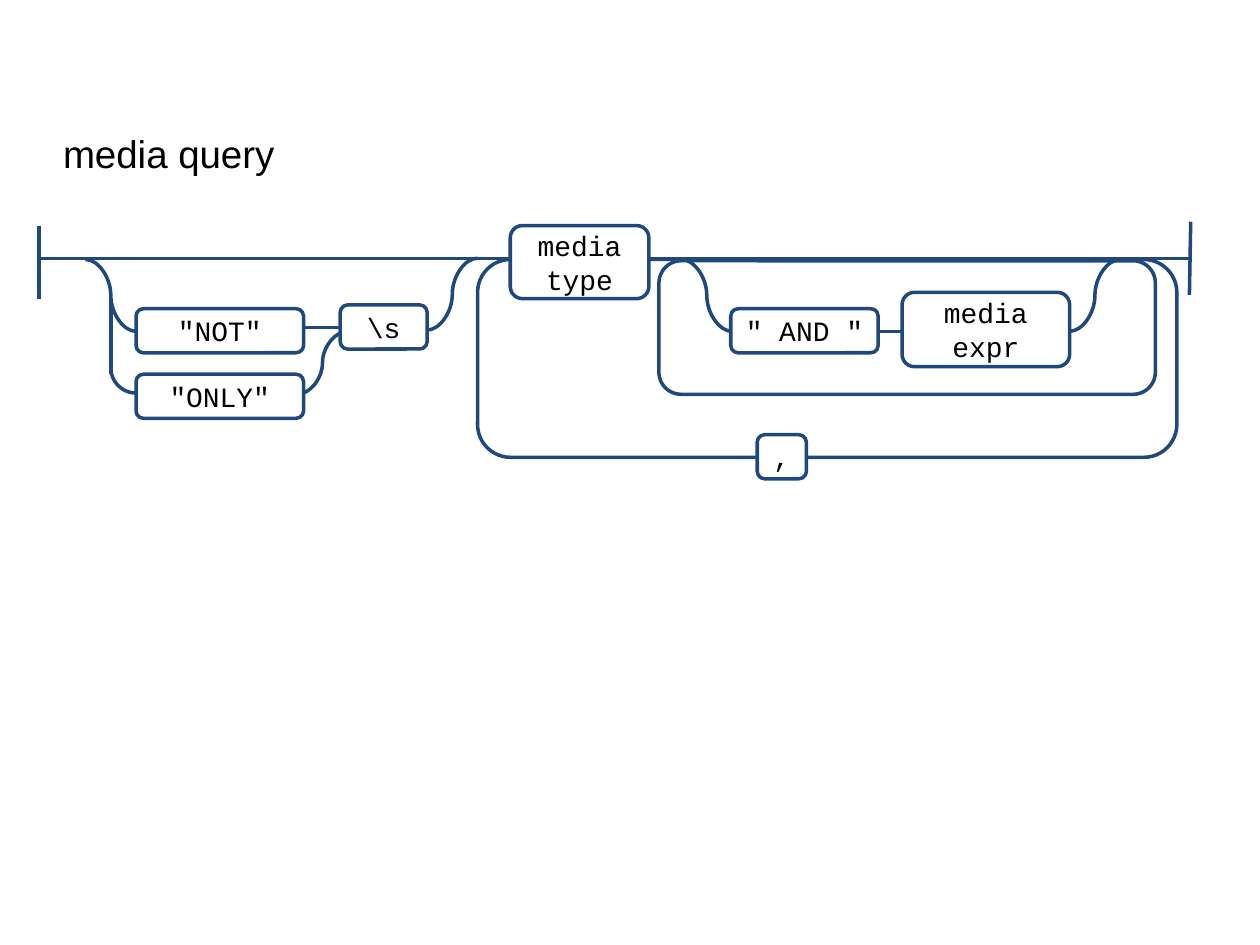
from typing import NamedTuple

from lxml import etree
from pptx import Presentation
from pptx.dml.color import RGBColor
from pptx.enum import shapes, text
from pptx.oxml import ns
from pptx.util import Inches, Pt

INK, WHITE, BLACK = "1F497D", "FFFFFF", "000000"
KIND = shapes.MSO_SHAPE
LINK = shapes.MSO_CONNECTOR
MID = 2.63
RAIL = 2.06


class Box(NamedTuple):
    x: float
    y: float
    w: float
    h: float
    label: str = ""
    fill: str | None = WHITE
    kind: int = KIND.FLOWCHART_ALTERNATE_PROCESS


class Wire(NamedTuple):
    x1: float
    y1: float
    x2: float
    y2: float
    width: float = 2
    kind: int = LINK.STRAIGHT


def hue(code: str) -> RGBColor:
    return RGBColor.from_string(code)


def write(shape, words, size=16, font="Courier New", align="CENTER", anchor="MIDDLE"):
    frame = shape.text_frame
    frame.word_wrap = True
    frame.auto_size = text.MSO_AUTO_SIZE.NONE
    frame.vertical_anchor = text.MSO_ANCHOR[anchor]
    para = frame.paragraphs[0]
    para.alignment = text.PP_ALIGN[align]
    run = para.add_run()
    run.text = words
    run.font.size = Pt(size)
    run.font.name = font
    run.font.color.rgb = hue(BLACK)


def stroke(line, width: float = 2) -> None:
    line.color.rgb = hue(INK)
    line.width = Pt(width)


def place(slide, box: Box):
    spot = [Inches(n) for n in box[:4]]
    shape = slide.shapes.add_shape(box.kind, *spot)
    shape.shadow.inherit = False
    if box.fill:
        shape.fill.solid()
        shape.fill.fore_color.rgb = hue(box.fill)
    else:
        shape.fill.background()
    stroke(shape.line)
    if box.label:
        write(shape, box.label)
    return shape


def join(slide, wire: Wire) -> None:
    ends = [Inches(n) for n in wire[:4]]
    link = slide.shapes.add_connector(wire.kind, *ends)
    stroke(link.line, wire.width)
    etree.SubElement(link._element.spPr, ns.qn("a:effectLst"))


def bend(x: float, y1: float, y2: float) -> Wire:
    return Wire(x, y1, x + 0.4, y2, kind=LINK.CURVE)


PARTS = [
    Box(5.23, 2.07, 3.94, 1.06),
    Wire(0.31, 2.05, 9.44, 2.05, 1.5),
    bend(8.49, MID, RAIL),
    Box(7.16, 2.32, 1.33, 0.59, "media expr"),
    bend(2.36, 3.13, MID),
    bend(5.41, RAIL, MID),
    Box(1.08, 2.45, 1.33, 0.35, '"NOT"'),
    bend(0.68, RAIL, MID),
    Box(0.88, 2.72, 0.4, 0.4, kind=KIND.ARC),
    Box(1.08, 2.97, 1.33, 0.35, '"ONLY"'),
    Wire(0.31, 1.79, 0.31, 2.37),
    Wire(9.45, 1.76, 9.44, 2.34),
    Wire(0.88, 2.37, 0.88, 2.97),
    Box(2.7, 2.42, 0.69, 0.35, r"\s"),
    Wire(2.4, 2.6, 2.7, 2.6, 1.5),
    bend(3.39, 2.62, 2.05),
    Box(3.79, 2.06, 5.55, 1.57, fill=None),
    Box(4.05, 1.79, 1.1, 0.58, "media type"),
    Wire(6.92, MID, 7.15, MID, 1.5),
    Box(6.01, 3.45, 0.39, 0.35, ","),
    Box(5.8, 2.45, 1.17, 0.35, '" AND "'),
]


def main() -> None:
    deck = Presentation()
    deck.slide_width, deck.slide_height = Inches(10), Inches(7.5)
    slide = deck.slides.add_slide(deck.slide_layouts[5])
    title = slide.shapes.title
    title.left, title.top = Inches(0.4), Inches(0.98)
    title.width, title.height = Inches(5.89), Inches(0.47)
    write(title, "media query", size=22, font="Arial", align="LEFT", anchor="TOP")
    for part in PARTS:
        if isinstance(part, Wire):
            join(slide, part)
            continue
        shape = place(slide, part)
        if part.kind == KIND.ARC:
            frame = shape._element.spPr.find(ns.qn("a:xfrm"))
            frame.set("flipH", "1")
            frame.set("flipV", "1")
    deck.save("out.pptx")


if __name__ == "__main__":
    main()
